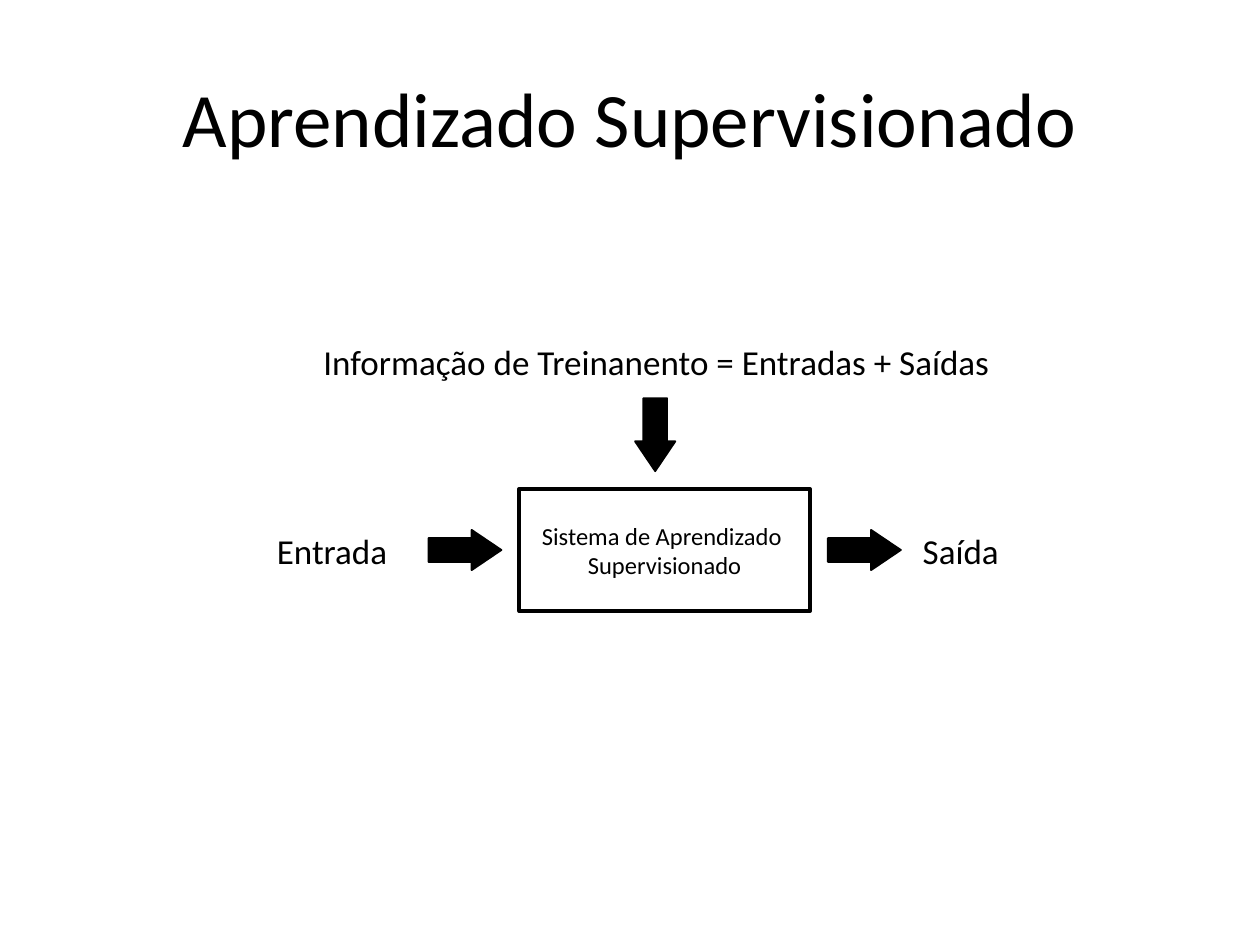
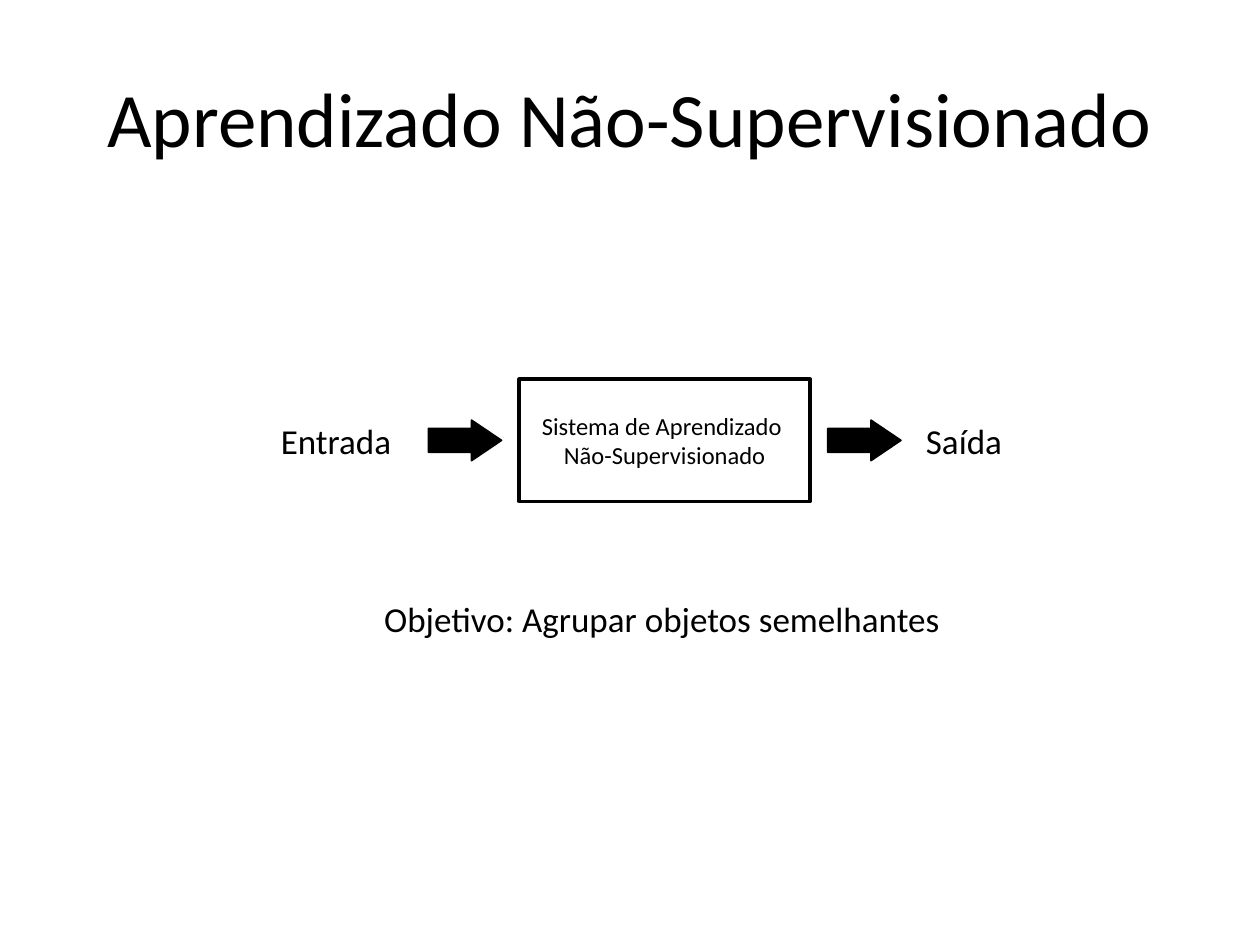
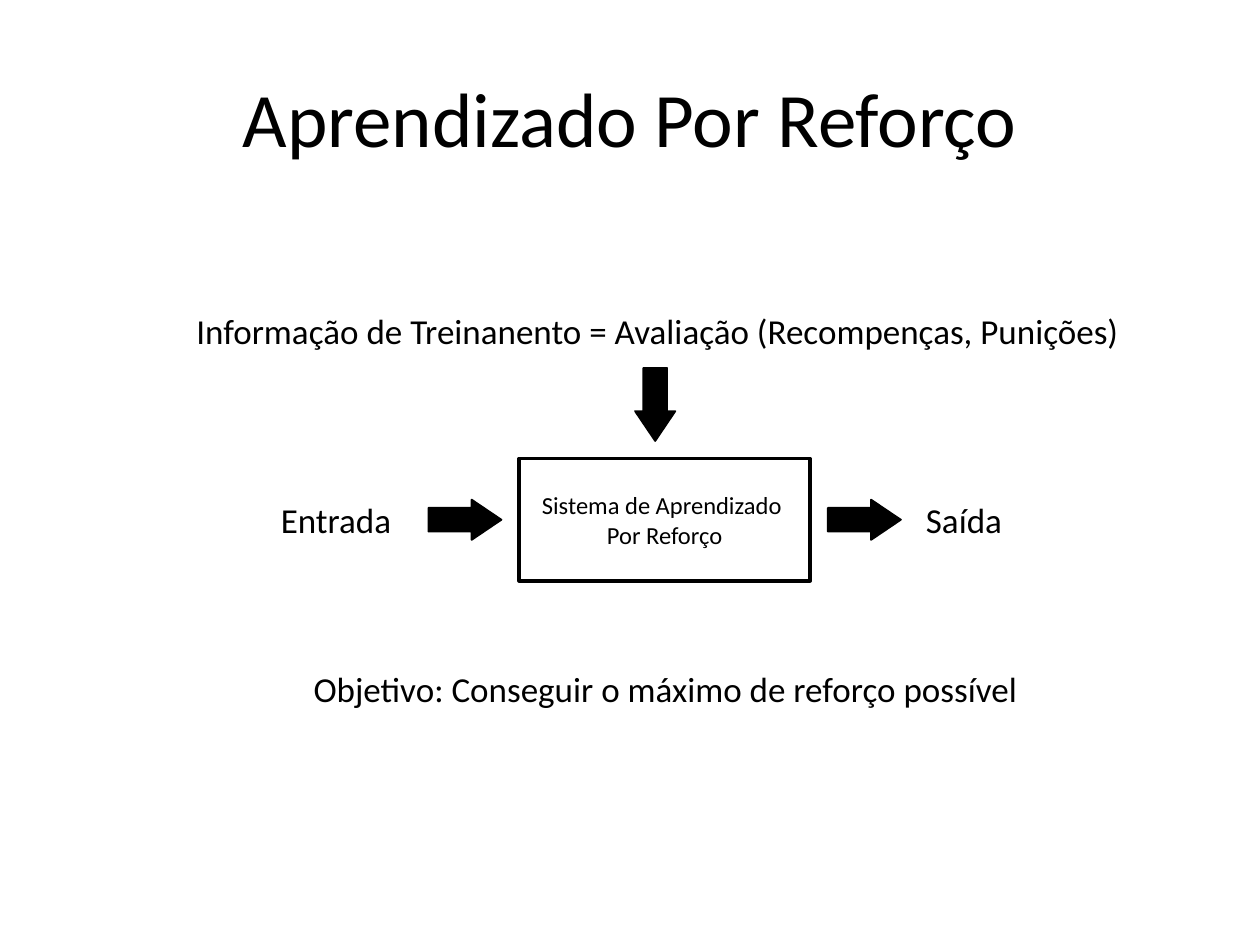
"""Build three slides that compare kinds of machine learning."""
from pptx import Presentation
from pptx.dml.color import RGBColor
from pptx.enum import shapes, text
from pptx.util import Inches, Pt

BLACK = RGBColor(0, 0, 0)
FONT = "Calibri"
TITLE_SIZE, LABEL_SIZE, SYSTEM_SIZE = 44, 20, 14
CENTER, LEFT = text.PP_ALIGN.CENTER, text.PP_ALIGN.LEFT

SYSTEM_LEFT, SYSTEM_WIDTH, SYSTEM_HEIGHT = 4.12, 2.31, 0.97
ARROW_WIDTH, ARROW_HEIGHT = 0.58, 0.32
ARROW_GAP = 0.14
LABEL_HEIGHT = 0.43
INPUT_WIDTH, OUTPUT_WIDTH = 1.09, 0.81
TRAINING_RISE, DOWN_ARROW_RISE = 1.23, 0.59

SLIDES = [
    {
        "title": "Aprendizado Supervisionado",
        "system": ["Sistema de Aprendizado ", "Supervisionado"],
        "system_top": 3.88,
        "input_left": 2.09,
        "output_left": 7.22,
        "align": CENTER,
        "training": ("Informação de Treinanento = Entradas + Saídas", 2.44, 5.54),
    },
    {
        "title": "Aprendizado Não-Supervisionado",
        "system": ["Sistema de Aprendizado ", "Não-Supervisionado"],
        "system_top": 3.01,
        "input_left": 2.13,
        "output_left": 7.25,
        "align": LEFT,
        "goal": ("Objetivo: Agrupar objetos semelhantes", 2.95, 4.69, 4.65),
    },
    {
        "title": "Aprendizado Por Reforço",
        "system": ["Sistema de Aprendizado ", "Por Reforço"],
        "system_top": 3.64,
        "input_left": 2.13,
        "output_left": 7.25,
        "align": LEFT,
        "training": (
            "Informação de Treinanento = Avaliação (Recompenças, Punições)", 1.46, 7.53),
        "goal": (
            "Objetivo: Conseguir o máximo de reforço possível", 2.39, 5.25, 5.83),
    },
]


def write(frame, lines, size, align):
    """Fill a text frame with one paragraph per line."""
    for index, line in enumerate(lines):
        para = frame.add_paragraph() if index else frame.paragraphs[0]
        para.alignment = align
        span = para.add_run()
        span.text = line
        span.font.name = FONT
        span.font.size = Pt(size)
        span.font.color.rgb = BLACK


def add_title(page, title):
    """Place and format the title placeholder."""
    box = page.shapes.title
    box.left, box.top = Inches(0.5), Inches(0.3)
    box.width, box.height = Inches(9), Inches(1.25)
    box.text_frame.vertical_anchor = text.MSO_ANCHOR.MIDDLE
    write(box.text_frame, [title], TITLE_SIZE, CENTER)


def add_label(page, wording, left, top, width, align):
    """Add a one-line label."""
    box = page.shapes.add_textbox(
        Inches(left), Inches(top), Inches(width), Inches(LABEL_HEIGHT))
    box.text_frame.word_wrap = False
    box.text_frame.auto_size = text.MSO_AUTO_SIZE.SHAPE_TO_FIT_TEXT
    write(box.text_frame, [wording], LABEL_SIZE, align)


def add_outlined(page, kind, left, top, width, height, line_width):
    """Add a preset shape with a black outline and no shadow."""
    shape = page.shapes.add_shape(
        kind, Inches(left), Inches(top), Inches(width), Inches(height))
    shape.shadow.inherit = False
    shape.line.color.rgb = BLACK
    shape.line.width = Pt(line_width)
    return shape


def add_system(page, lines, top):
    """Add the framed learning system."""
    box = add_outlined(page, shapes.MSO_SHAPE.RECTANGLE, SYSTEM_LEFT, top,
                       SYSTEM_WIDTH, SYSTEM_HEIGHT, 2)
    box.fill.background()
    box.text_frame.word_wrap = False
    box.text_frame.vertical_anchor = text.MSO_ANCHOR.MIDDLE
    write(box.text_frame, lines, SYSTEM_SIZE, CENTER)


def add_arrow(page, left, top, rotation=0):
    """Add a solid block arrow."""
    arrow = add_outlined(page, shapes.MSO_SHAPE.RIGHT_ARROW, left, top,
                         ARROW_WIDTH, ARROW_HEIGHT, 1)
    arrow.fill.solid()
    arrow.fill.fore_color.rgb = BLACK
    arrow.adjustments[0] = 0.59
    arrow.adjustments[1] = 0.74
    arrow.rotation = rotation


def add_diagram(page, content):
    """Draw input, system and output, with any training and goal labels."""
    top, align = content["system_top"], content["align"]
    middle = top + SYSTEM_HEIGHT / 2
    arrow_top = middle - ARROW_HEIGHT / 2
    label_top = middle - LABEL_HEIGHT / 2
    add_system(page, content["system"], top)
    add_arrow(page, SYSTEM_LEFT - ARROW_GAP - ARROW_WIDTH, arrow_top)
    add_label(page, "Entrada", content["input_left"], label_top, INPUT_WIDTH, align)
    add_label(page, "Saída", content["output_left"], label_top, OUTPUT_WIDTH, align)
    if "training" in content:
        wording, left, width = content["training"]
        add_label(page, wording, left, top - TRAINING_RISE, width, align)
        add_arrow(page, 4.91, top - DOWN_ARROW_RISE, 90)
    add_arrow(page, SYSTEM_LEFT + SYSTEM_WIDTH + ARROW_GAP, arrow_top)
    if "goal" in content:
        add_label(page, *content["goal"], align)


def main():
    """Build and save the deck."""
    deck = Presentation()
    deck.slide_width, deck.slide_height = Inches(10), Inches(7.5)
    title_only = deck.slide_layouts[5]
    for content in SLIDES:
        page = deck.slides.add_slide(title_only)
        add_title(page, content["title"])
        add_diagram(page, content)
    deck.save("out.pptx")


if __name__ == "__main__":
    main()
